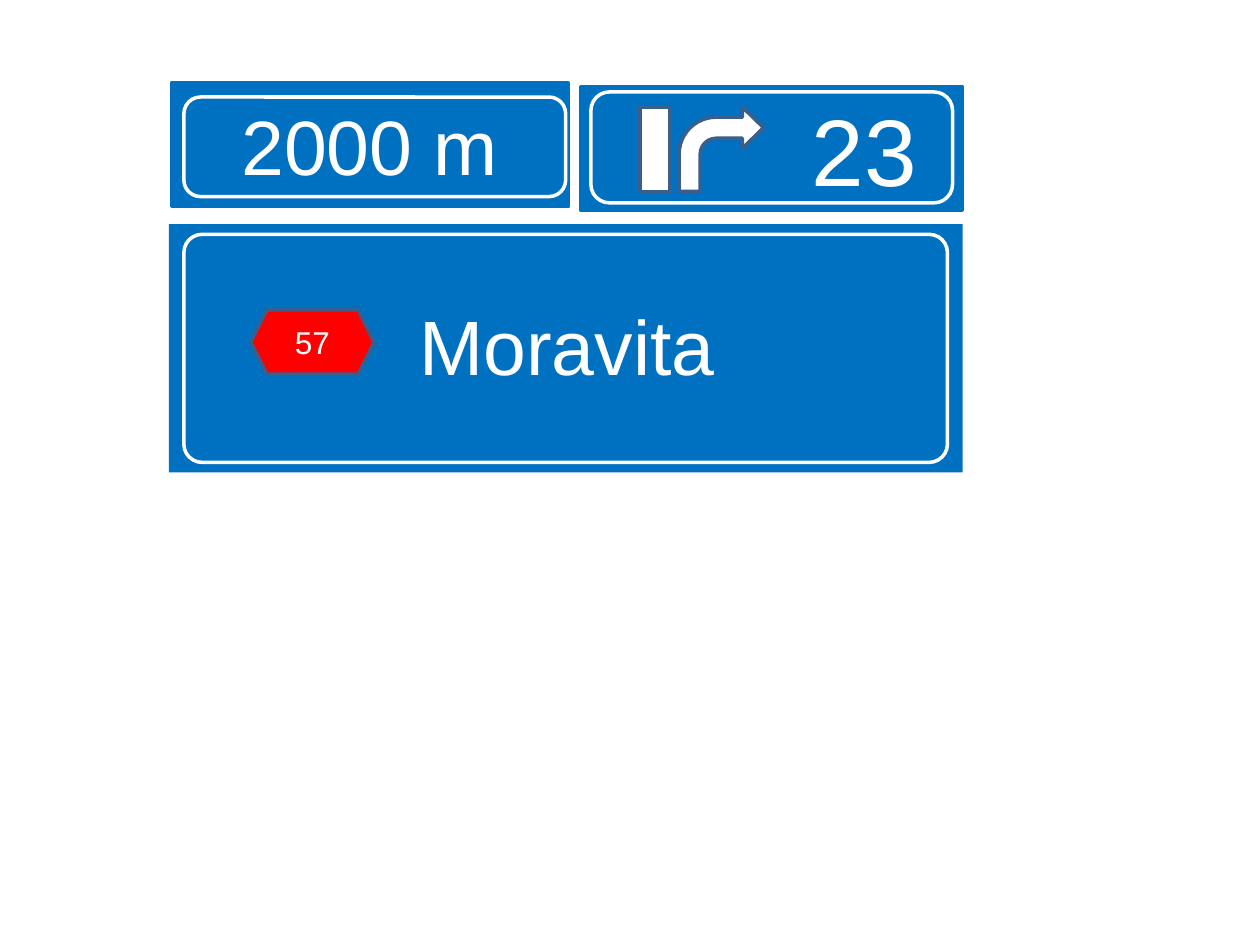
from pptx import Presentation
from pptx.dml.color import RGBColor
from pptx.enum import shapes, text
from pptx.util import Inches, Pt

BLUE = RGBColor(0x00, 0x70, 0xC0)
STEEL = RGBColor(0x3A, 0x5F, 0x8C)
RED = RGBColor(0xFF, 0x00, 0x00)
WHITE = RGBColor(0xFF, 0xFF, 0xFF)
FONT = "Arial"
KIND = shapes.MSO_SHAPE

# Sign parts, back to front: kind, (left, top, width, height), fill, line, adjustments, label
# A label is: wording, size, (left, top, right, bottom) margins
MARGINS = (0.1, 0.05, 0.1, 0.05)
PARTS = [
    # Panels, lane symbols and road number
    (KIND.ROUNDED_RECTANGLE, (1.36, 0.66, 3.15, 0.98), BLUE, BLUE, [0],
     ("2000 m", 44, MARGINS)),
    (KIND.ROUNDED_RECTANGLE, (4.61, 0.69, 3.03, 0.98), BLUE, BLUE, [0],
     ("23", 54, (1.57, 0.05, 0.1, 0.05))),
    (KIND.RECTANGLE, (5.08, 0.85, 0.24, 0.67), WHITE, STEEL, [], None),
    (KIND.BENT_ARROW, (5.39, 0.85, 0.67, 0.67), WHITE, STEEL,
     [0.25, 0.245, 0.25, 0.438], None),
    (KIND.RECTANGLE, (1.34, 1.78, 6.3, 1.97), BLUE, None, [],
     ("Moravita", 44, (0.12, 0.05, 0.1, 0.11))),
    (KIND.HEXAGON, (1.99, 2.46, 0.98, 0.51), RED, STEEL, [],
     ("57", 18, MARGINS)),
    # White borders
    (KIND.ROUNDED_RECTANGLE, (1.46, 0.77, 3.03, 0.79), None, WHITE, [], None),
    (KIND.ROUNDED_RECTANGLE, (4.69, 0.73, 2.87, 0.88), None, WHITE, [], None),
    (KIND.ROUNDED_RECTANGLE, (1.46, 1.86, 6.06, 1.81), None, WHITE, [0.08], None),
]


def paint(fill, color):
    if color is None:
        fill.background()
    else:
        fill.solid()
        fill.fore_color.rgb = color


def write_label(shape, wording, size, margins):
    frame = shape.text_frame
    frame.text = wording
    frame.word_wrap = True
    frame.vertical_anchor = text.MSO_ANCHOR.MIDDLE
    (frame.margin_left, frame.margin_top,
     frame.margin_right, frame.margin_bottom) = map(Inches, margins)
    para = frame.paragraphs[0]
    para.alignment = text.PP_ALIGN.CENTER
    font = para.runs[0].font
    font.name, font.size = FONT, Pt(size)
    font.color.rgb = WHITE


def add_part(page, kind, place, fill, line, adjustments, label):
    shape = page.shapes.add_shape(kind, *map(Inches, place))
    shape.shadow.inherit = False
    paint(shape.fill, fill)
    paint(shape.line.fill, line)
    if line is not None:
        shape.line.width = Pt(2)
    for index, value in enumerate(adjustments):
        shape.adjustments[index] = value
    if label:
        write_label(shape, *label)


def main():
    deck = Presentation()
    deck.slide_width, deck.slide_height = Inches(10), Inches(7.5)
    page = deck.slides.add_slide(deck.slide_layouts[6])
    for part in PARTS:
        add_part(page, *part)
    deck.save("out.pptx")


if __name__ == "__main__":
    main()
